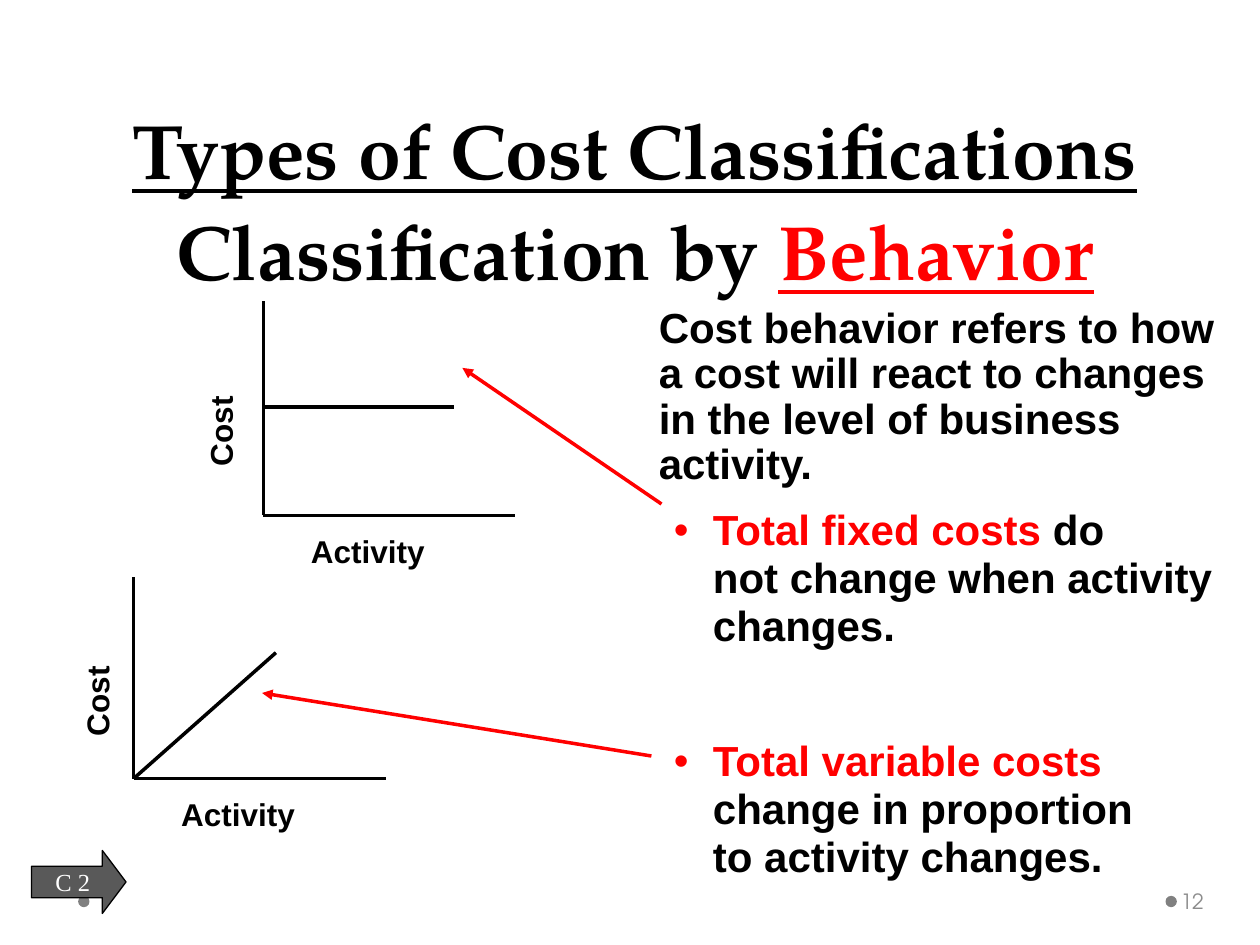
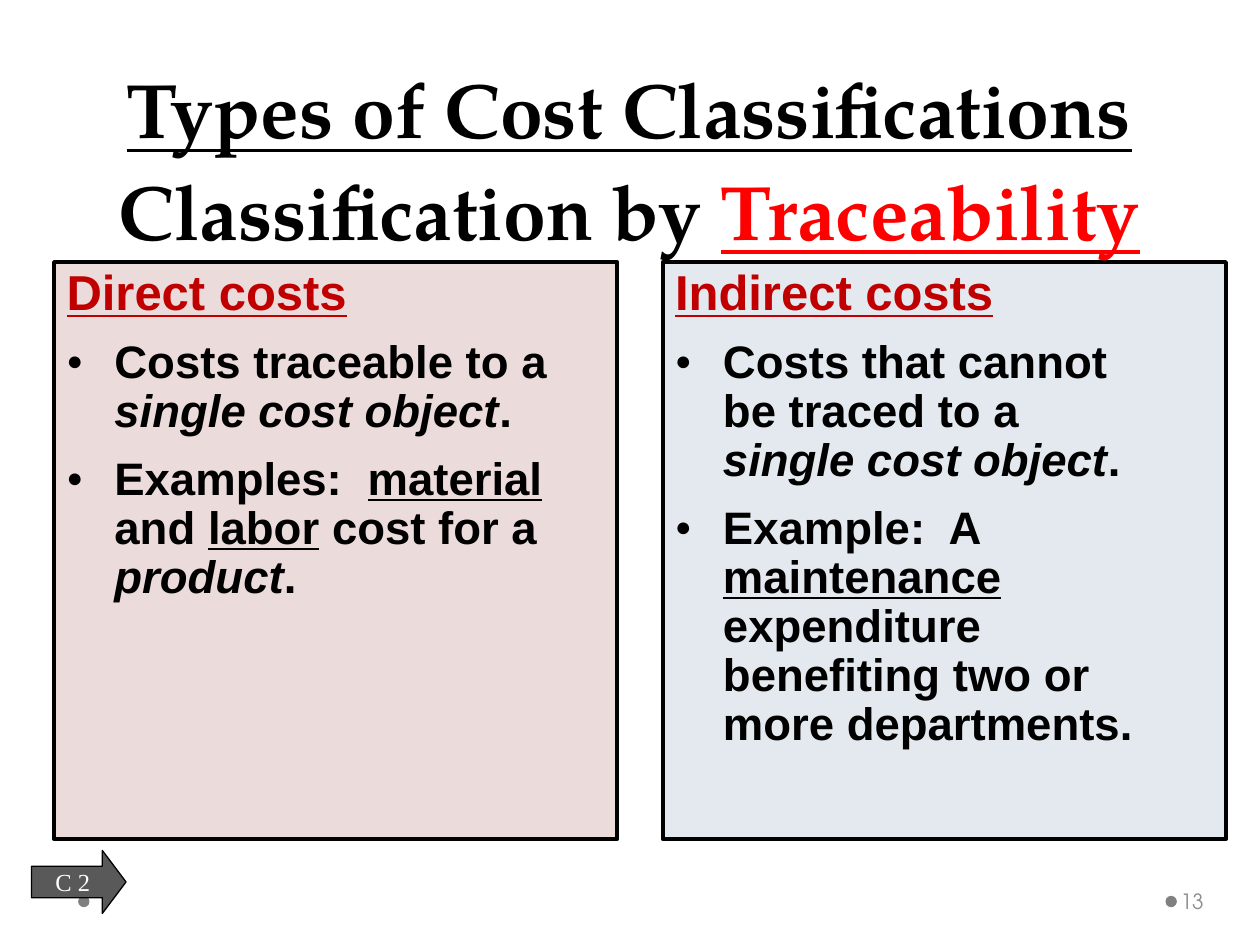
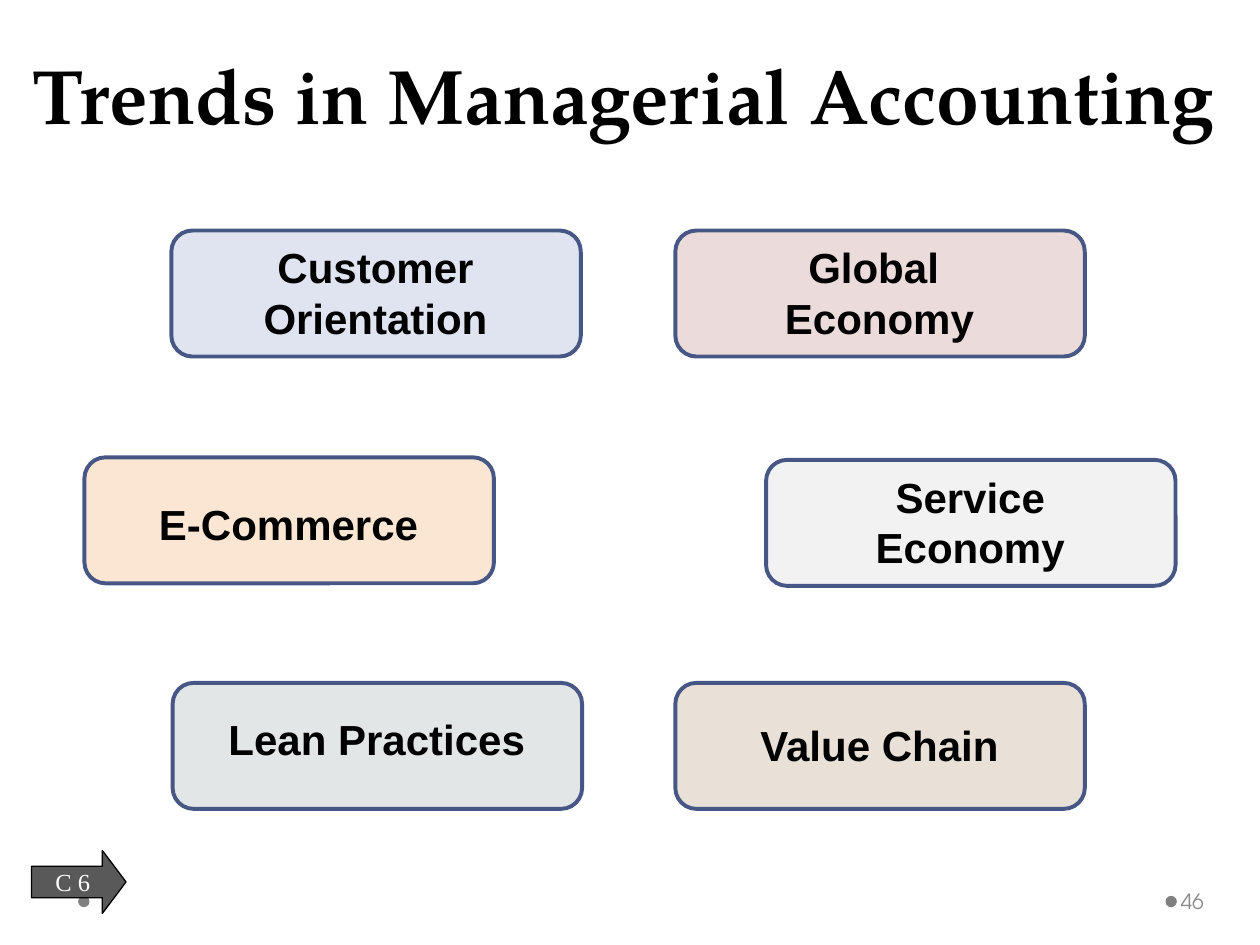
import pptx
import pptx.dml.color
import pptx.enum.shapes
import pptx.enum.text
import pptx.oxml.ns
import pptx.util
from lxml import etree

PX = 9144  # 100 px to the inch
BLACK, RED, WHITE = "000000", "FF0000", "FFFFFF"
DARK, GREY, PALE, CRIMSON, NAVY = "595959", "808080", "8C8C8C", "C00000", "475785"
SANS, HEAD, SERIF, FOOT = "Arial", "TeX Gyre Pagella", "Times New Roman", "TeX Gyre Adventor"
SHAPE = pptx.enum.shapes.MSO_SHAPE
ANCHOR = pptx.enum.text.MSO_ANCHOR
CENTER = pptx.enum.text.PP_ALIGN.CENTER


def px(*sizes):
    return [pptx.util.Emu(size * PX) for size in sizes]


def rgb(code):
    return pptx.dml.color.RGBColor.from_string(code)


def node(parent, tag, **attrs):
    return etree.SubElement(parent, pptx.oxml.ns.qn(tag), **attrs)


def para(frame, runs, size, font=SANS, color=BLACK, bold=True, align=None,
         line=None, before=0, left=0, hang=0, bullet=None, scale=100):
    """Add a paragraph of (text, marks) runs; marks are u, i and r (red)."""
    par = frame.paragraphs[0]
    if par.runs:
        par = frame.add_paragraph()
    props = par._p.get_or_add_pPr()
    if left:
        props.set("marL", str(left * PX))
        props.set("indent", str(-hang * PX))
    if bullet:
        node(props, "a:buSzPct", val=str(scale * 1000))
        node(props, "a:buFont", typeface=SANS)
        node(props, "a:buChar", char=bullet)
    par.alignment = align
    par.line_spacing = line
    par.space_before = pptx.util.Pt(before)
    par.font.size = pptx.util.Pt(size)
    par.font.name = font
    par.font.bold = bold
    par.font.color.rgb = rgb(color)
    for text, marks in runs:
        for index, part in enumerate(text.split("\n")):
            if index:
                par.add_line_break()
            if part:
                run = par.add_run()
                run.text = part
                if "u" in marks:
                    run.font.underline = True
                if "i" in marks:
                    run.font.italic = True
                if "r" in marks:
                    run.font.color.rgb = rgb(RED)


def box(shapes, x, y, width, height, anchor=ANCHOR.TOP):
    item = shapes.add_textbox(*px(x, y, width, height))
    item.text_frame.word_wrap = True
    item.text_frame.vertical_anchor = anchor
    return item


def block(shapes, kind, x, y, width, height, fill, line=None, weight=2.25):
    item = shapes.add_shape(kind, *px(x, y, width, height))
    item.shadow.inherit = False
    item.fill.solid()
    item.fill.fore_color.rgb = rgb(fill)
    if line:
        item.line.color.rgb = rgb(line)
        item.line.width = pptx.util.Pt(weight)
    else:
        item.line.fill.background()
    return item


def rule(shapes, start, end, color=BLACK, arrow=False):
    kind = pptx.enum.shapes.MSO_CONNECTOR.STRAIGHT
    item = shapes.add_connector(kind, *px(*start, *end))
    item.line.color.rgb = rgb(color)
    item.line.width = pptx.util.Pt(2)
    if arrow:
        node(item.line._get_or_add_ln(), "a:tailEnd", type="triangle")
    node(item._element.spPr, "a:effectLst")


def title(slide, x, y, width, height, runs):
    frame = box(slide.shapes, x, y, width, height, ANCHOR.BOTTOM).text_frame
    para(frame, runs, 44, HEAD, align=CENTER, line=pptx.util.Pt(58))


def footer(slide, number, goal):
    """Add the two dots, the slide number and the goal arrow."""
    for x in (925, 62):
        block(slide.shapes, SHAPE.OVAL, x, 711, 9, 9, GREY)
    frame = box(slide.shapes, 934, 695, 61, 40, ANCHOR.MIDDLE).text_frame
    frame.margin_left, frame.margin_right = px(3, 5)
    para(frame, [(number, "")], 12, FOOT, PALE, False)
    arrow = block(slide.shapes, SHAPE.RIGHT_ARROW, 25, 675, 75, 50, DARK, BLACK, 0.75)
    arrow.adjustments[0], arrow.adjustments[1] = 0.5, 0.375
    frame = arrow.text_frame
    frame.word_wrap = False
    frame.vertical_anchor = ANCHOR.MIDDLE
    para(frame, [(goal, "")], 14, SERIF, WHITE, False, CENTER)


def graph(slide, x, y, height, gap, start, end):
    """Draw axes from the origin (x, y) and one cost line."""
    shapes = slide.shapes.add_group_shape().shapes
    rule(shapes, start, end)
    rule(shapes, (x, y - height), (x, y))
    rule(shapes, (x, y), (x + 200, y))
    para(box(shapes, x + 28, y + 8, 144, 40).text_frame, [("Activity", "")], 18)
    cost = box(shapes, x - gap - 50, y - height // 2 - 14, 100, 40)
    cost.rotation = 270
    para(cost.text_frame, [("Cost", "")], 18)


def panel(slide, x, fill, head, points):
    item = block(slide.shapes, SHAPE.RECTANGLE, x, 208, 447, 458, fill, BLACK)
    frame = item.text_frame
    frame.word_wrap = True
    frame.vertical_anchor = ANCHOR.TOP
    left = pptx.enum.text.PP_ALIGN.LEFT
    para(frame, [(head, "u")], 28, color=CRIMSON, align=left, line=0.9)
    for runs in points:
        para(frame, runs, 26, align=left, line=0.9, before=10.4,
             left=38, hang=38, bullet="●", scale=60)


def card(slide, x, y, fill, drop, *lines):
    block(slide.shapes, SHAPE.ROUNDED_RECTANGLE, x, y, 325, 100, fill, NAVY)
    frame = box(slide.shapes, x + 16, y + drop, 292, 100 - 2 * drop).text_frame
    for text in lines:
        para(frame, [(text, "")], 24, align=CENTER)


def behavior(slide):
    graph(slide, 209, 409, 170, 34, (209, 323), (360, 323))
    graph(slide, 106, 618, 160, 29, (106, 618), (219, 518))
    rule(slide.shapes, (525, 400), (367, 292), RED, True)
    rule(slide.shapes, (517, 600), (208, 550), RED, True)
    title(slide, 25, 67, 958, 173, [
        ("Types of Cost Classifications\n", "u"),
        ("Classification by ", ""), ("Behavior", "ur")])
    frame = box(slide.shapes, 475, 239, 508, 494).text_frame
    para(frame, [("Cost behavior refers to how a cost will react to changes "
                  "in the level of business activity.", "")], 24, line=0.9, left=38)
    for before, name, text in (
            (10.8, "Total fixed costs ", "do\nnot change when activity changes."),
            (50, "Total variable costs ", "change in proportion\nto activity changes.")):
        para(frame, [(name, "r"), (text, "")], 24, line=0.95, before=before,
             left=81, hang=31, bullet="•")
    footer(slide, "12", "C 2")


def tracing(slide):
    panel(slide, 43, "ECDBDB", "Direct costs", [
        [("Costs traceable to a ", ""), ("single cost object", "i"), (".", "")],
        [("Examples:  ", ""), ("material", "u"), (" and ", ""), ("labor", "u"),
         (" cost for a ", ""), ("product", "i"), (".", "")]])
    panel(slide, 526, "E4E9EF", "Indirect costs", [
        [("Costs that cannot\nbe traced to a\n", ""), ("single cost object", "i"), (".", "")],
        [("Example:  A ", ""), ("maintenance", "u"),
         (" expenditure\nbenefiting two or\nmore departments.", "")]])
    title(slide, 8, 58, 983, 150, [
        ("Types of Cost Classifications ", "u"),
        ("Classification by ", ""), ("Traceability", "ur")])
    footer(slide, "13", "C 2")


def trends(slide):
    title(slide, 8, 58, 975, 58, [("Trends in Managerial Accounting", "")])
    card(slide, 136, 183, "DFE4F0", 4, "Customer Orientation")
    card(slide, 67, 363, "FAE6D3", 28, "E-Commerce")
    card(slide, 536, 183, "ECDBDB", 4, "Global ", "Economy")
    card(slide, 608, 365, "F2F2F2", 4, "Service Economy")
    card(slide, 137, 542, "E3E6E7", 19, "Lean Practices")
    card(slide, 536, 542, "E9E0D7", 24, "Value Chain")
    footer(slide, "46", "C 6")


def main():
    deck = pptx.Presentation()
    deck.slide_width, deck.slide_height = px(1000, 750)
    for build in (behavior, tracing, trends):
        build(deck.slides.add_slide(deck.slide_layouts[6]))
    deck.save("out.pptx")


if __name__ == "__main__":
    main()
